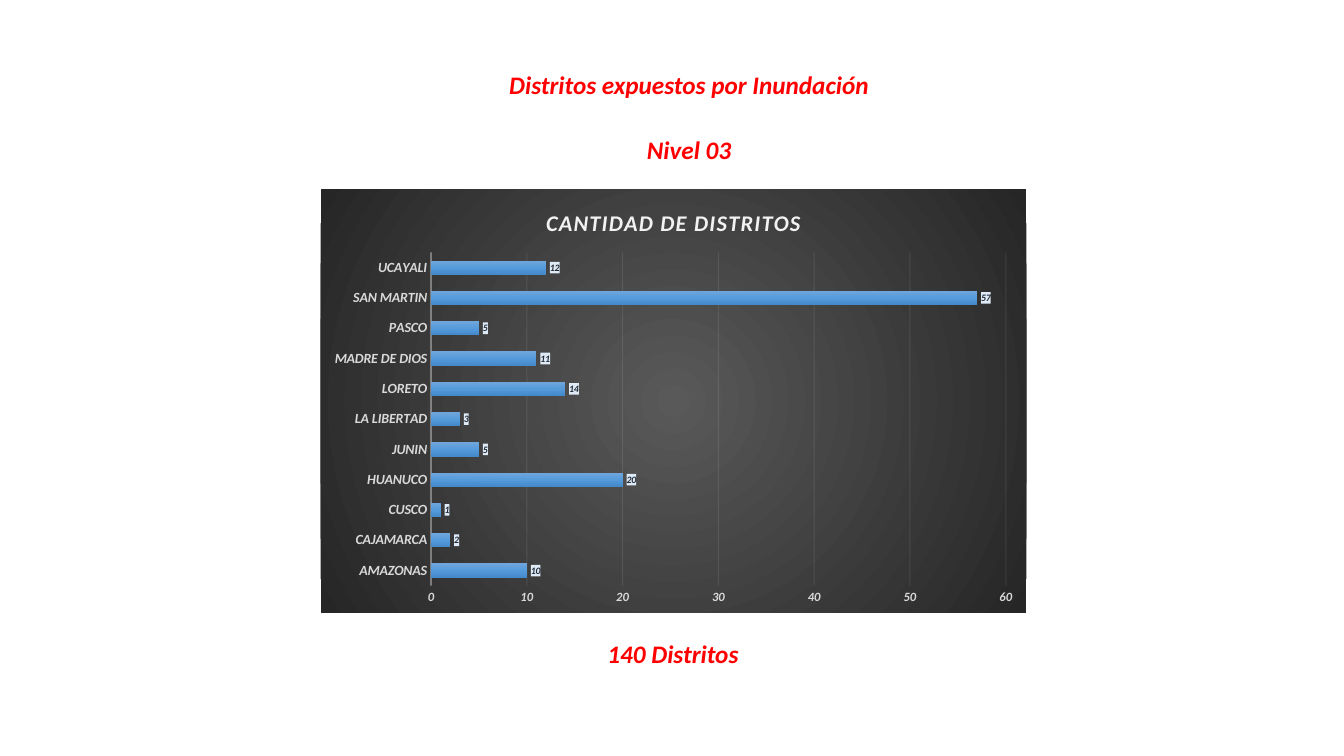
"""Build the slide on districts exposed to flooding at level 03."""
from dataclasses import dataclass

from lxml import etree
from pptx import Presentation
from pptx.chart.data import CategoryChartData
from pptx.dml.color import RGBColor
from pptx.enum.chart import XL_CHART_TYPE, XL_LABEL_POSITION, XL_TICK_MARK
from pptx.enum.text import MSO_ANCHOR, MSO_AUTO_SIZE, PP_ALIGN
from pptx.oxml import parse_xml
from pptx.oxml.ns import nsdecls, qn
from pptx.util import Inches, Pt

BAR_CLUSTERED = XL_CHART_TYPE.BAR_CLUSTERED
OUTSIDE_END = XL_LABEL_POSITION.OUTSIDE_END
NO_TICK = XL_TICK_MARK.NONE
TOP = MSO_ANCHOR.TOP
NO_AUTOFIT = MSO_AUTO_SIZE.NONE
CENTER = PP_ALIGN.CENTER

FONT = "Calibri"
RED, PALE, GREY, NAVY, ICE = "FF0000", "F2F2F2", "D9D9D9", "222A35", "DEEBF7"
SLIDE_WIDTH, SLIDE_HEIGHT = Inches(13.33), Inches(7.5)
DISTRICTS = {
    "AMAZONAS": 10, "CAJAMARCA": 2, "CUSCO": 1, "HUANUCO": 20,
    "JUNIN": 5, "LA LIBERTAD": 3, "LORETO": 14, "MADRE DE DIOS": 11,
    "PASCO": 5, "SAN MARTIN": 57, "UCAYALI": 12,
}
BACKDROP_STOPS = {0: "595959", 100: "262626"}
BAR_STOPS = {0: "71A6DB", 50: "559BDB", 100: "448ACA"}
CIRCLE = ('<a:path path="circle"><a:fillToRect l="50000" t="50000" '
          'r="50000" b="50000"/></a:path>')
DOWNWARD = '<a:lin ang="5400000" scaled="0"/>'


@dataclass(frozen=True)
class Area:
    """A rectangle in shares of the slide's width and height."""
    left: float
    top: float
    width: float
    height: float

    def place(self) -> tuple[int, int, int, int]:
        """Give the rectangle in slide units."""
        return (int(self.left * SLIDE_WIDTH), int(self.top * SLIDE_HEIGHT),
                int(self.width * SLIDE_WIDTH), int(self.height * SLIDE_HEIGHT))


@dataclass(frozen=True)
class Caption:
    """A red line of text and its area."""
    text: str
    area: Area


LINE_SHARE = 0.4 / 7.5
HEADING = Caption("Distritos expuestos por Inundación",
                  Area(4.93 / 13.33, 0.64 / 7.5, 3.81 / 13.33, LINE_SHARE))
CAPTIONS = [
    Caption("Nivel 03", Area(5.98 / 13.33, 1.28 / 7.5, 1.71 / 13.33, LINE_SHARE)),
    Caption("140 Distritos", Area(5.9 / 13.33, 6.28 / 7.5, 1.55 / 13.33, LINE_SHARE)),
]
CHART_AREA = Area(3.18 / 13.33, 1.88 / 7.5, 7 / 13.33, 4.2 / 7.5)


def color(value: str) -> RGBColor:
    """Turn a hex string into a colour."""
    return RGBColor.from_string(value)


def style_font(font, size: float, value: str) -> None:
    """Set bold italic type of a size and colour."""
    font.name, font.size = FONT, Pt(size)
    font.bold = font.italic = True
    font.color.rgb = color(value)


def write_caption(box, caption: Caption, wrap: bool) -> None:
    """Place a shape and write the caption in it."""
    box.left, box.top, box.width, box.height = caption.area.place()
    frame = box.text_frame
    frame.text = caption.text
    frame.word_wrap, frame.auto_size = wrap, NO_AUTOFIT
    frame.vertical_anchor = TOP
    para = frame.paragraphs[0]
    para.alignment, para.line_spacing = CENTER, 1.0
    style_font(para.runs[0].font, 18, RED)


def gradient(stops: dict[int, str], direction: str):
    """Make a gradient fill element."""
    marks = "".join(f'<a:gs pos="{share * 1000}"><a:srgbClr val="{value}"/></a:gs>'
                    for share, value in stops.items())
    return parse_xml(f'<a:gradFill {nsdecls("a")} rotWithShape="1">'
                     f'<a:gsLst>{marks}</a:gsLst>{direction}</a:gradFill>')


def chart_properties(fill):
    """Wrap a fill in borderless chart shape properties."""
    properties = parse_xml(f'<c:spPr {nsdecls("c", "a")}><a:ln><a:noFill/></a:ln></c:spPr>')
    properties.insert(0, fill)
    return properties


def style_line(line, width: float, owner, query: str, opacity: int) -> None:
    """Set a pale, partly transparent line."""
    line.width, line.color.rgb = Pt(width), color(PALE)
    for tint in owner.xpath(query):
        etree.SubElement(tint, qn("a:alpha")).set("val", str(opacity * 1000))


def style_axes(chart) -> None:
    """Format both axes and the gridlines."""
    categories, values = chart.category_axis, chart.value_axis
    for axis, size in ((categories, 10), (values, 9)):
        axis.major_tick_mark = axis.minor_tick_mark = NO_TICK
        style_font(axis.tick_labels.font, size, GREY)
    values.minimum_scale, values.maximum_scale, values.major_unit = 0, 60, 10
    values.tick_labels.number_format = "#,##0"
    values.tick_labels.number_format_is_linked = False
    values.format.line.fill.background()
    style_line(categories.format.line, 1, categories._element,
               "c:spPr//a:srgbClr", 54)
    style_line(values.major_gridlines.format.line, 0.75, values._element,
               "c:majorGridlines//a:srgbClr", 10)


def style_bars(plot) -> None:
    """Format the bars and their value labels."""
    plot.gap_width, plot.overlap, plot.vary_by_categories = 115, -20, False
    series = plot.series[0]
    series.invert_if_negative = False
    series._element.get_or_add_spPr().append(gradient(BAR_STOPS, DOWNWARD))
    labels = series.data_labels
    labels.show_value, labels.position = True, OUTSIDE_END
    labels.number_format, labels.number_format_is_linked = "#,##0", False
    style_font(labels.font, 7, NAVY)
    fill = parse_xml(f'<a:solidFill {nsdecls("a")}><a:srgbClr val="{ICE}"/></a:solidFill>')
    labels._element.find(qn("c:txPr")).addprevious(chart_properties(fill))


def add_district_chart(slide) -> None:
    """Add the bar chart of districts by region."""
    chart_data = CategoryChartData(number_format="#,##0")
    chart_data.categories = list(DISTRICTS)
    chart_data.add_series("Series 1", list(DISTRICTS.values()))
    chart = slide.shapes.add_chart(BAR_CLUSTERED, *CHART_AREA.place(), chart_data).chart
    chart.has_legend = False
    chart.font.name, chart.font.size = FONT, Pt(10)
    chart.has_title = True
    chart.chart_title.include_in_layout = False
    para = chart.chart_title.text_frame.paragraphs[0]
    para.text = "CANTIDAD DE DISTRITOS"
    span = para.runs[0]
    style_font(span.font, 16, PALE)
    span.font._element.set("spc", "100")
    style_axes(chart)
    style_bars(chart.plots[0])
    chart._chartSpace.find(qn("c:chart")).addnext(
        chart_properties(gradient(BACKDROP_STOPS, CIRCLE)))


def main() -> None:
    """Build and save the deck."""
    deck = Presentation()
    deck.slide_width, deck.slide_height = SLIDE_WIDTH, SLIDE_HEIGHT
    page = deck.slides.add_slide(deck.slide_layouts[5])
    write_caption(page.shapes.title, HEADING, wrap=False)
    for caption in CAPTIONS:
        write_caption(page.shapes.add_textbox(*caption.area.place()), caption, wrap=True)
    add_district_chart(page)
    deck.save("out.pptx")


if __name__ == "__main__":
    main()
